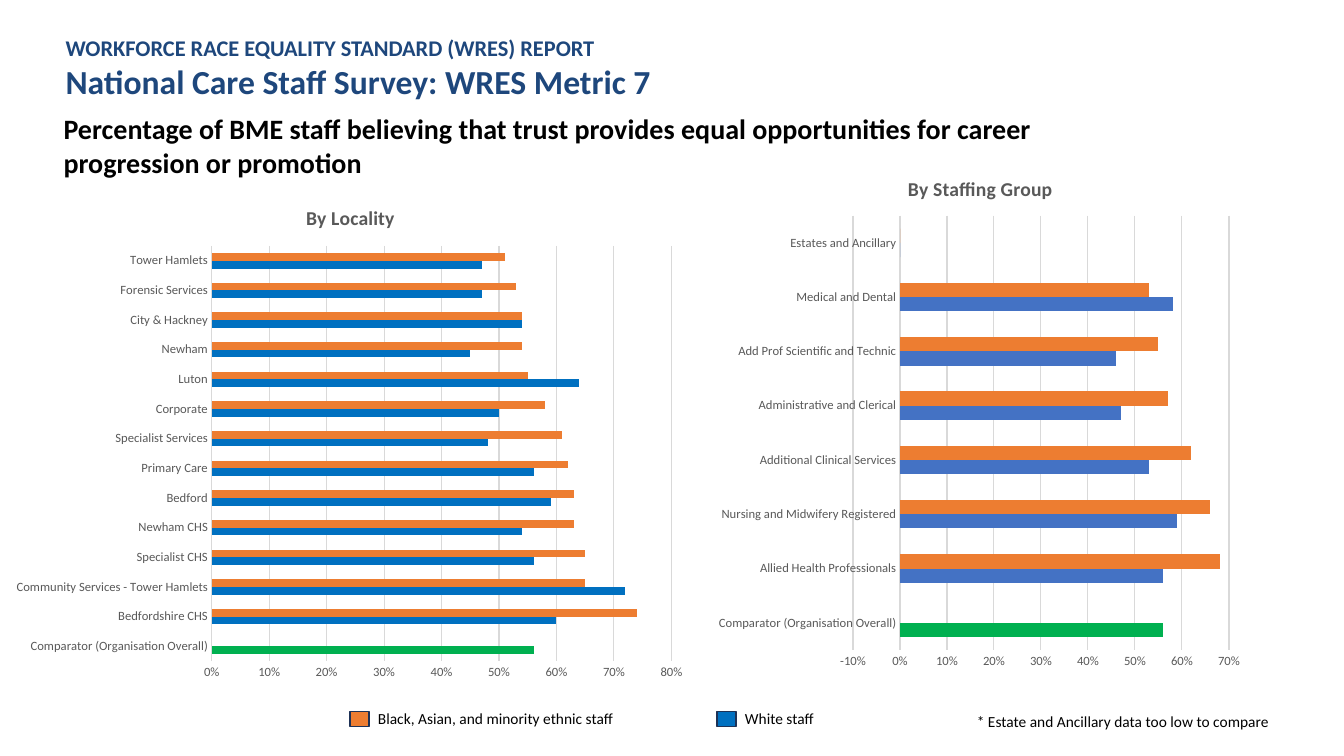
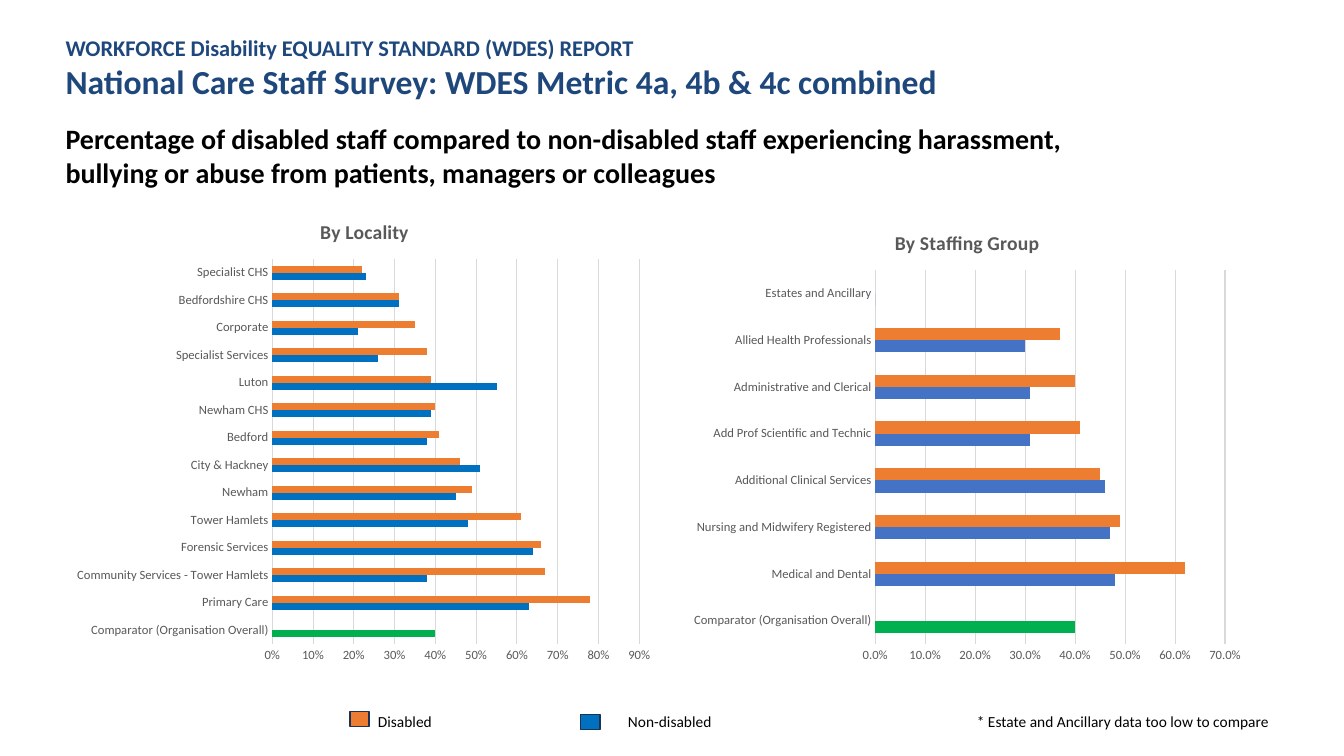
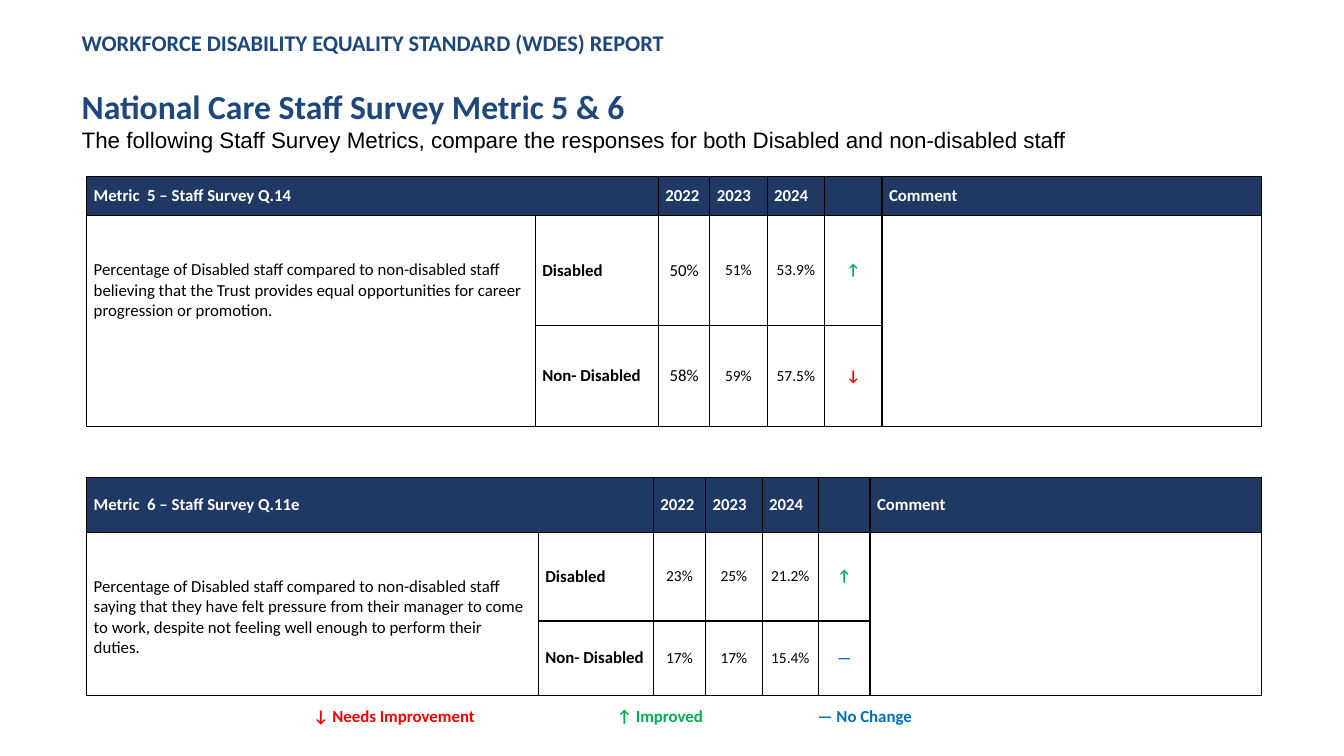
from collections import namedtuple

from lxml import etree
from pptx import Presentation
from pptx.chart.data import CategoryChartData
from pptx.dml.color import RGBColor
from pptx.enum.chart import XL_CHART_TYPE as ChartType, XL_TICK_MARK as TickMark
from pptx.enum.shapes import MSO_SHAPE as Shape
from pptx.enum.text import MSO_ANCHOR as Anchor, MSO_AUTO_SIZE as AutoSize, PP_ALIGN as Align
from pptx.oxml.ns import qn
from pptx.util import Pt

PX = 9144  # EMU in one px, 100 px to the inch
SLIDE_WIDTH, SLIDE_HEIGHT = 1333, 750

HEADING_BLUE = RGBColor(0x1E, 0x47, 0x7C)
HEADER_NAVY = RGBColor(0x20, 0x38, 0x64)
SWATCH_EDGE = RGBColor(0x1E, 0x32, 0x56)
BLACK = RGBColor(0x00, 0x00, 0x00)
WHITE = RGBColor(0xFF, 0xFF, 0xFF)
AXIS_GREY = RGBColor(0x59, 0x59, 0x59)
GRID_GREY = RGBColor(0xD9, 0xD9, 0xD9)
ORANGE = RGBColor(0xED, 0x7D, 0x31)
BLUE = RGBColor(0x00, 0x70, 0xC0)
SOFT_BLUE = RGBColor(0x44, 0x72, 0xC4)
GREEN = RGBColor(0x00, 0xB0, 0x50)
RED = RGBColor(0xFF, 0x00, 0x00)

FONT = "Calibri"
SURVEY = "National Care Staff Survey"
COMPARATOR = "Comparator (Organisation Overall)"
TOO_LOW = "* Estate and Ancillary data too low to compare"

Box = namedtuple("Box", "left top width height")
Panel = namedtuple("Panel", "heading heading_at box plot low high number_format color rows")


def px(length):
    return round(length * PX)


def emu(box):
    return [px(length) for length in box]


def style(font, size, color=BLACK, bold=False, name=FONT):
    font.size, font.bold, font.name = Pt(size), bold, name
    font.color.rgb = color


def write(paragraph, text, size, color=BLACK, bold=False, name=FONT, align=Align.LEFT):
    paragraph.text = text
    paragraph.alignment = align
    for run in paragraph.runs:
        style(run.font, size, color, bold, name)


def add_label(slide, box, text, size=11):
    label = slide.shapes.add_textbox(*emu(box)).text_frame
    label.word_wrap = True
    write(label.paragraphs[0], text, size)
    return label


def fit_placeholder(placeholder, box):
    placeholder.left, placeholder.top, placeholder.width, placeholder.height = emu(box)
    frame = placeholder.text_frame
    frame.auto_size = AutoSize.NONE
    frame.word_wrap = True
    frame.vertical_anchor = Anchor.TOP
    return frame


def add_headed_slide(deck, report, heading, heading_box, statement, statement_box,
                     heading_gap=0, **statement_style):
    """Slide with a report name and heading in the title, and a statement in the body."""
    slide = deck.slides.add_slide(deck.slide_layouts[1])
    title = fit_placeholder(slide.shapes.title, heading_box)
    title.text = report + "\n" + heading
    for paragraph, text, size in zip(title.paragraphs, (report, heading), (16, 24)):
        write(paragraph, text, size, HEADING_BLUE, True)
    title.paragraphs[1].space_before = Pt(heading_gap)

    body = fit_placeholder(slide.placeholders[1], statement_box)
    paragraph = body.paragraphs[0]
    write(paragraph, statement, **statement_style)
    paragraph.space_before = Pt(0)
    properties = paragraph._p.get_or_add_pPr()
    properties.set("marL", "0")
    properties.set("indent", "0")
    etree.SubElement(properties, qn("a:buNone"))
    return slide


def set_layout(parent, index, **settings):
    """Give a chart part a manual layout; index is its place if it is missing."""
    layout = parent.find(qn("c:layout"))
    if layout is None:
        layout = etree.Element(qn("c:layout"))
        parent.insert(index, layout)
    manual = etree.SubElement(layout, qn("c:manualLayout"))
    for name, value in settings.items():
        etree.SubElement(manual, qn("c:" + name)).set("val", str(value))


def add_bar_panel(slide, panel):
    data = CategoryChartData(number_format="0%")
    data.categories = [name for name, _, _ in panel.rows]
    data.add_series("Series 1", [first for _, first, _ in panel.rows])
    data.add_series("Series 2", [second for _, _, second in panel.rows])
    chart = slide.shapes.add_chart(ChartType.BAR_CLUSTERED, *emu(panel.box), data).chart
    chart.has_legend = False
    style(chart.font, 9, AXIS_GREY)

    chart.has_title = True
    write(chart.chart_title.text_frame.paragraphs[0], panel.heading, 14, AXIS_GREY, True,
          align=Align.CENTER)
    box, plot = panel.box, panel.plot

    def fractions(left, top):
        return {"xMode": "edge", "yMode": "edge",
                "x": round((left - box.left) / box.width, 4),
                "y": round((top - box.top) / box.height, 4)}

    set_layout(chart.chart_title._element, 1, **fractions(*panel.heading_at))
    set_layout(chart._chartSpace.chart.plotArea, 0, layoutTarget="inner",
               **fractions(plot.left, plot.top),
               w=round(plot.width / box.width, 4), h=round(plot.height / box.height, 4))

    bars = chart.plots[0]
    bars.gap_width = 182
    bars.vary_by_categories = False
    for series, color in zip(bars.series, (panel.color, ORANGE)):
        series.invert_if_negative = False
        series.format.fill.solid()
        series.format.fill.fore_color.rgb = color
    comparator = bars.series[0].points[0].format.fill
    comparator.solid()
    comparator.fore_color.rgb = GREEN

    names, values = chart.category_axis, chart.value_axis
    for axis in (names, values):
        axis.major_tick_mark = axis.minor_tick_mark = TickMark.NONE
        style(axis.tick_labels.font, 9, AXIS_GREY)
    values.minimum_scale, values.maximum_scale, values.major_unit = panel.low, panel.high, 0.1
    values.tick_labels.number_format = panel.number_format
    values.tick_labels.number_format_is_linked = False
    values.has_major_gridlines = True
    values.format.line.fill.background()
    for line in (names.format.line, values.major_gridlines.format.line):
        line.color.rgb = GRID_GREY
        line.width = Pt(0.75)


def add_legend_entry(slide, left, top, color, text, gap=18, rise=7):
    swatch = slide.shapes.add_shape(Shape.RECTANGLE, *emu((left, top, 19, 15)))
    swatch.shadow.inherit = False
    swatch.fill.solid()
    swatch.fill.fore_color.rgb = color
    swatch.line.color.rgb = SWATCH_EDGE
    swatch.line.width = Pt(1)
    add_label(slide, Box(left + gap, top - rise, 288, 29), text)


def add_chart_slide(deck, report, heading, statement, statement_box, panels, legend):
    slide = add_headed_slide(deck, report, heading, Box(55, 29, 1042, 77),
                             statement, statement_box, size=20, bold=True)
    for panel in panels:
        add_bar_panel(slide, panel)
    for entry in legend:
        add_legend_entry(slide, *entry)
    add_label(slide, Box(959, 702, 333, 29), TOO_LOW)


def format_cell(cell, fill=None):
    cell.margin_left = cell.margin_right = px(7)
    cell.margin_top = cell.margin_bottom = 0
    cell.vertical_anchor = Anchor.MIDDLE
    properties = cell._tc.get_or_add_tcPr()
    for side in ("a:lnL", "a:lnR", "a:lnT", "a:lnB"):
        border = etree.SubElement(properties, qn(side), w=str(Pt(1)))
        paint = etree.SubElement(border, qn("a:solidFill"))
        etree.SubElement(paint, qn("a:srgbClr"), val=str(BLACK))
    if fill is None:
        cell.fill.background()
    else:
        cell.fill.solid()
        cell.fill.fore_color.rgb = fill


def add_metric_table(slide, left, top, widths, heights, metric, question, groups,
                     first_year_size=11):
    box = Box(left, top, sum(widths), sum(heights))
    table = slide.shapes.add_table(len(heights), len(widths), *emu(box)).table
    for column, width in zip(table.columns, widths):
        column.width = px(width)
    for row, height in zip(table.rows, heights):
        row.height = px(height)
    for r in range(len(heights)):
        for c in range(len(widths)):
            format_cell(table.cell(r, c), HEADER_NAVY if r == 0 else None)

    def fill_in(row, column, text, size=12, **look):
        write(table.cell(row, column).text_frame.paragraphs[0], text, size, **look)

    table.cell(0, 0).merge(table.cell(0, 1))
    for column in (0, 6):
        table.cell(1, column).merge(table.cell(2, column))
    for column, text in zip((0, 2, 3, 4, 6), (metric, "2022", "2023", "2024", "Comment")):
        fill_in(0, column, text, color=WHITE, bold=True)
    table.cell(1, 0).vertical_anchor = Anchor.TOP
    table.cell(1, 0).margin_top = px(44)
    fill_in(1, 0, question)
    for row, (group, shares, trend, trend_color) in enumerate(groups, 1):
        fill_in(row, 1, group, bold=True)
        for column, share in enumerate(shares, 2):
            fill_in(row, column, share, first_year_size if column == 2 else 11,
                    align=Align.CENTER)
        fill_in(row, 5, trend, 11, color=trend_color, bold=True, align=Align.CENTER)


def add_trend_key(slide, box, entries, stops):
    paragraph = add_label(slide, box, "").paragraphs[0]
    tabs = etree.SubElement(paragraph._p.get_or_add_pPr(), qn("a:tabLst"))
    for stop in stops:
        etree.SubElement(tabs, qn("a:tab"), pos=str(px(stop)), algn="l")
    for place, (text, color) in enumerate(entries):
        run = paragraph.add_run()
        run.text = "\t" + text if place else text
        style(run.font, 12, color, True)


RACE_LOCALITY = Panel(
    "By Locality", (300, 199), Box(3, 183, 688, 503), Box(210, 244, 456, 412),
    0, 0.8, "0%", BLUE, [
        (COMPARATOR, 0.56, None),
        ("Bedfordshire CHS", 0.6, 0.74),
        ("Community Services - Tower Hamlets", 0.72, 0.65),
        ("Specialist CHS", 0.56, 0.65),
        ("Newham CHS", 0.54, 0.63),
        ("Bedford", 0.59, 0.63),
        ("Primary Care", 0.56, 0.62),
        ("Specialist Services", 0.48, 0.61),
        ("Corporate", 0.5, 0.58),
        ("Luton", 0.64, 0.55),
        ("Newham", 0.45, 0.54),
        ("City & Hackney", 0.54, 0.54),
        ("Forensic Services", 0.47, 0.53),
        ("Tower Hamlets", 0.47, 0.51),
    ])

RACE_STAFFING = Panel(
    "By Staffing Group", (897, 170), Box(702, 154, 538, 520), Box(846, 214, 373, 431),
    -0.1, 0.7, "0%", SOFT_BLUE, [
        (COMPARATOR, 0.56, None),
        ("Allied Health Professionals", 0.56, 0.68),
        ("Nursing and Midwifery Registered", 0.59, 0.66),
        ("Additional Clinical Services", 0.53, 0.62),
        ("Administrative and Clerical", 0.47, 0.57),
        ("Add Prof Scientific and Technic", 0.46, 0.55),
        ("Medical and Dental", 0.58, 0.53),
        ("Estates and Ancillary", 0, 0),
    ])

DISABILITY_STAFFING = Panel(
    "By Staffing Group", (884, 224), Box(677, 209, 564, 457), Box(868, 268, 347, 371),
    0, 0.7, "0.0%", SOFT_BLUE, [
        (COMPARATOR, 0.4, None),
        ("Medical and Dental", 0.48, 0.62),
        ("Nursing and Midwifery Registered", 0.47, 0.49),
        ("Additional Clinical Services", 0.46, 0.45),
        ("Add Prof Scientific and Technic", 0.31, 0.41),
        ("Administrative and Clerical", 0.31, 0.4),
        ("Allied Health Professionals", 0.3, 0.37),
        ("Estates and Ancillary", 0, None),
    ])

DISABILITY_LOCALITY = Panel(
    "By Locality", (314, 213), Box(64, 198, 592, 469), Box(270, 257, 364, 382),
    0, 0.9, "0%", BLUE, [
        (COMPARATOR, 0.4, None),
        ("Primary Care", 0.63, 0.78),
        ("Community Services - Tower Hamlets", 0.38, 0.67),
        ("Forensic Services", 0.64, 0.66),
        ("Tower Hamlets", 0.48, 0.61),
        ("Newham", 0.45, 0.49),
        ("City & Hackney", 0.51, 0.46),
        ("Bedford", 0.38, 0.41),
        ("Newham CHS", 0.39, 0.4),
        ("Luton", 0.55, 0.39),
        ("Specialist Services", 0.26, 0.38),
        ("Corporate", 0.21, 0.35),
        ("Bedfordshire CHS", 0.31, 0.31),
        ("Specialist CHS", 0.23, 0.22),
    ])


def add_metrics_slide(deck):
    slide = add_headed_slide(
        deck, "WORKFORCE DISABILITY EQUALITY STANDARD (WDES) REPORT",
        SURVEY + " Metric 5 & 6", Box(71, 24, 1112, 108),
        "The following Staff Survey Metrics, compare the responses for both Disabled "
        "and non-disabled staff", Box(71, 120, 1112, 37),
        heading_gap=21, size=16, name="Arial")
    add_metric_table(
        slide, 86, 175, (445, 122, 51, 57, 57, 57, 376), (39, 109, 100),
        "Metric  5 – Staff Survey Q.14",
        "Percentage of Disabled staff compared to non-disabled staff believing that the "
        "Trust provides equal opportunities for career progression or promotion.",
        [("Disabled", ("50%", "51%", "53.9%"), "↑", GREEN),
         ("Non- Disabled", ("58%", "59%", "57.5%"), "↓", RED)],
        first_year_size=12)
    add_metric_table(
        slide, 86, 474, (448, 114, 52, 56, 56, 51, 388), (54, 88, 74),
        "Metric  6 – Staff Survey Q.11e",
        "Percentage of Disabled staff compared to non-disabled staff saying that they have "
        "felt pressure from their manager to come to work, despite not feeling well enough "
        "to perform their duties.",
        [("Disabled", ("23%", "25%", "21.2%"), "↑", GREEN),
         ("Non- Disabled", ("17%", "17%", "15.4%"), "—", BLUE)])
    add_trend_key(slide, Box(301, 695, 645, 30),
                  [("↓ Needs Improvement", RED), ("↑ Improved", GREEN), ("— No Change", BLUE)],
                  stops=(301, 500))


def main():
    deck = Presentation()
    deck.slide_width, deck.slide_height = px(SLIDE_WIDTH), px(SLIDE_HEIGHT)
    add_chart_slide(
        deck, "WORKFORCE RACE EQUALITY STANDARD (WRES) REPORT",
        SURVEY + ": WRES Metric 7",
        "Percentage of BME staff believing that trust provides equal opportunities for "
        "career progression or promotion", Box(53, 106, 1042, 77),
        [RACE_LOCALITY, RACE_STAFFING],
        [(347, 706, ORANGE, "Black, Asian, and minority ethnic staff"),
         (711, 706, BLUE, "White staff")])
    add_chart_slide(
        deck, "WORKFORCE Disability EQUALITY STANDARD (WDES) REPORT",
        SURVEY + ": WDES Metric 4a, 4b & 4c combined",
        "Percentage of disabled staff compared to non-disabled staff experiencing "
        "harassment, bullying or abuse from patients, managers or colleagues",
        Box(55, 116, 1082, 77),
        [DISABILITY_STAFFING, DISABILITY_LOCALITY],
        [(347, 706, ORANGE, "Disabled", 18, 4),
         (576, 709, BLUE, "Non-disabled", 37, 7)])
    add_metrics_slide(deck)
    deck.save("out.pptx")


if __name__ == "__main__":
    main()
